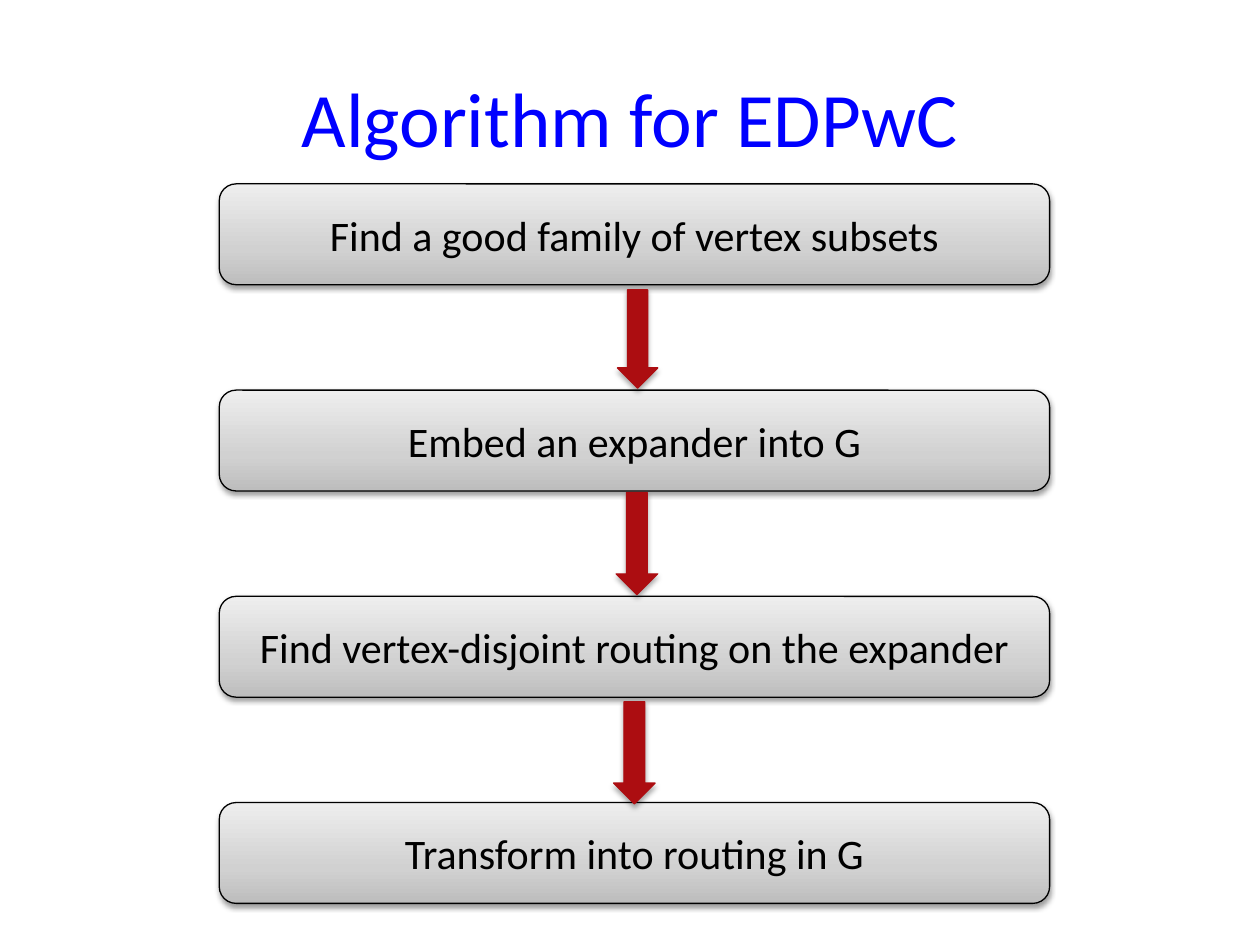
from copy import deepcopy

from lxml.etree import SubElement
from pptx import Presentation
from pptx.dml.color import RGBColor
from pptx.enum.shapes import MSO_SHAPE as Shape
from pptx.enum.text import MSO_ANCHOR as Anchor, PP_ALIGN as Align
from pptx.oxml.ns import qn
from pptx.util import Inches, Pt

BLUE = RGBColor(0x00, 0x00, 0xFF)
BLACK = RGBColor(0x00, 0x00, 0x00)
RED = RGBColor(0xAC, 0x0D, 0x11)
STEP_GRADIENT = [
    (0, RGBColor(0xBD, 0xBD, 0xBD)),
    (0.35, RGBColor(0xD1, 0xD1, 0xD1)),
    (1, RGBColor(0xEE, 0xEE, 0xEE)),
]
STEPS = [
    "Find a good family of vertex subsets",
    "Embed an expander into G",
    "Find vertex-disjoint routing on the expander",
    "Transform into routing in G",
]
# Left, top, width and height of the arrow after each step but the last
ARROWS = [(4.9, 2.3, 0.32, 0.78), (4.89, 3.91, 0.33, 0.81), (4.87, 5.57, 0.33, 0.81)]


def write_text(shape, text, size, color, font="Calibri"):
    frame = shape.text_frame
    frame.word_wrap = True
    frame.vertical_anchor = Anchor.MIDDLE
    paragraph = frame.paragraphs[0]
    paragraph.alignment = Align.CENTER
    run = paragraph.add_run()
    run.text = text
    run.font.name = font
    run.font.size = Pt(size)
    run.font.color.rgb = color


def set_outline(shape, color):
    shape.line.color.rgb = color
    shape.line.width = Pt(0.75)


def set_shadow(shape, distance, opacity):
    """Cast a soft black shadow straight down."""
    shape.shadow.inherit = False
    effects = shape.element.spPr.find(qn("a:effectLst"))
    shadow = SubElement(effects, qn("a:outerShdw"), blurRad=str(Pt(3.1)),
                        dist=str(Pt(distance)), dir="5400000", rotWithShape="0")
    black = SubElement(shadow, qn("a:srgbClr"), val=str(BLACK))
    SubElement(black, qn("a:alpha"), val=str(opacity * 1000))


def set_gradient(shape, stops, angle):
    fill = shape.fill
    fill.gradient()
    fill.gradient_angle = angle
    stop_list = shape.element.spPr.find(qn("a:gradFill")).find(qn("a:gsLst"))
    while len(stop_list) < len(stops):
        stop_list.append(deepcopy(stop_list[0]))
    for stop, (position, color) in zip(fill.gradient_stops, stops):
        stop.position = position
        stop.color.rgb = color


def add_title(slide, left, top, width, height):
    title = slide.shapes.add_textbox(left, top, width, height)
    write_text(title, "Algorithm for EDPwC", size=44, color=BLUE)


def add_step(slide, text, left, top, width, height):
    step = slide.shapes.add_shape(Shape.ROUNDED_RECTANGLE, left, top, width, height)
    set_gradient(step, STEP_GRADIENT, angle=90)
    set_outline(step, BLACK)
    set_shadow(step, distance=1.6, opacity=38)
    write_text(step, text, size=24, color=BLACK)


def add_arrow(slide, left, top, width, height):
    arrow = slide.shapes.add_shape(Shape.DOWN_ARROW, left, top, width, height)
    arrow.fill.solid()
    arrow.fill.fore_color.rgb = RED
    set_outline(arrow, RED)
    set_shadow(arrow, distance=1.8, opacity=35)


def add_flow(slide, left, top, width, height):
    """Spread the steps evenly down the box, then lay the arrows between them."""
    step_height = Inches(0.8)
    pitch = (height - step_height) / (len(STEPS) - 1)
    for row, text in enumerate(STEPS):
        add_step(slide, text, left, top + round(row * pitch), width, step_height)
    for arrow_box in ARROWS:
        add_arrow(slide, *map(Inches, arrow_box))


def main():
    deck = Presentation()
    deck.slide_width, deck.slide_height = Inches(10), Inches(7.5)
    slide = deck.slides.add_slide(deck.slide_layouts[6])
    add_title(slide, Inches(0.5), Inches(0.3), Inches(9), Inches(1.25))
    add_flow(slide, Inches(1.74), Inches(1.46), Inches(6.59), Inches(5.71))
    deck.save("out.pptx")


if __name__ == "__main__":
    main()
